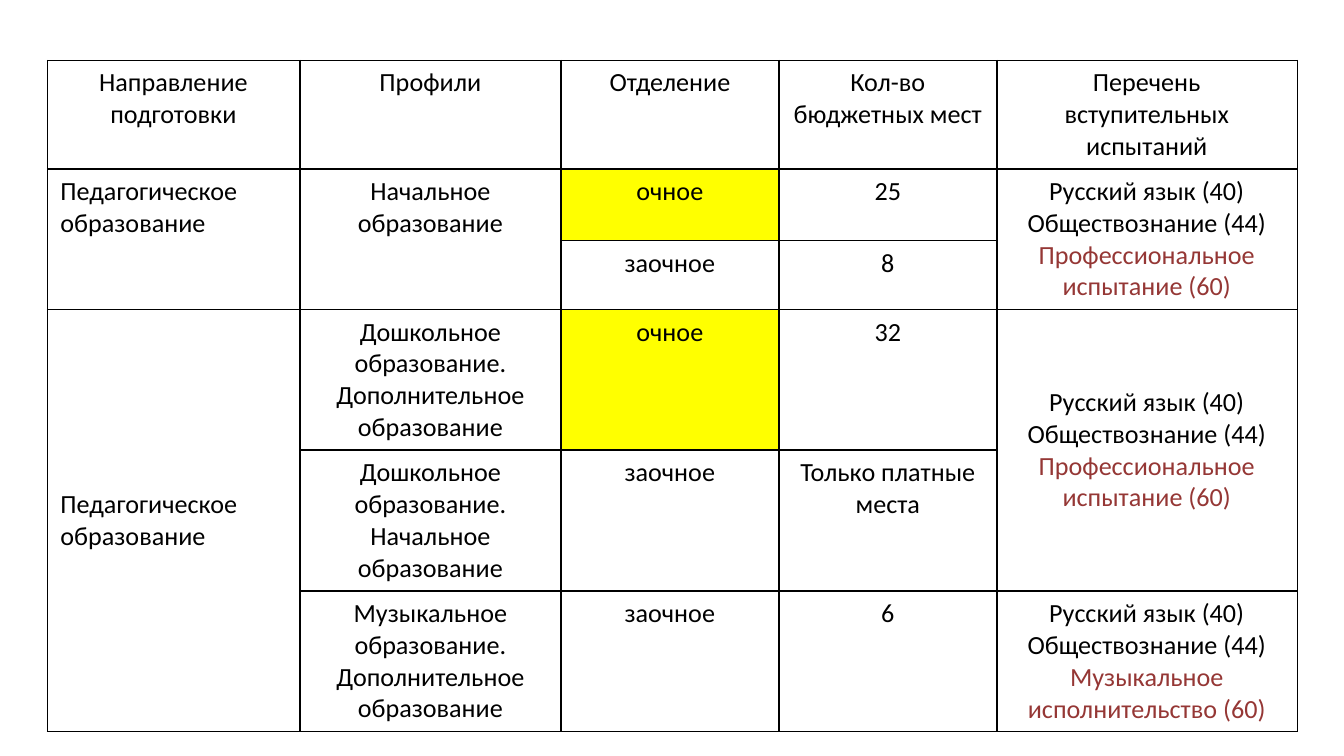
from lxml.etree import SubElement
from pptx import Presentation
from pptx.dml.color import RGBColor
from pptx.enum.text import MSO_ANCHOR, PP_ALIGN
from pptx.oxml.ns import qn
from pptx.util import Pt

PX = 914400 / 134.4
BLACK, RED, YELLOW = "000000", "953735", "FFFF00"
OUTER, THIN, INNER = 0.25, 0.5, 1


def px(length):
    return round(length * PX)


def color(value):
    return RGBColor.from_string(value)


class SlideBuilder:
    font_name = "Calibri"
    font_size = 14

    def __init__(self, deck):
        self.slide = deck.slides.add_slide(deck.slide_layouts[6])

    def table(self, left, top, widths, heights):
        frame = self.slide.shapes.add_table(
            len(heights), len(widths), px(left), px(top), px(sum(widths)), px(sum(heights)))
        table = frame.table
        table.first_row = table.horz_banding = False
        for column, width in zip(table.columns, widths):
            column.width = px(width)
        for row, height in zip(table.rows, heights):
            row.height = px(height)
        return table

    def borders(self, cell, edges):
        properties = cell._tc.get_or_add_tcPr()
        for side in "LRTB":
            line = SubElement(properties, qn(f"a:ln{side}"), w=str(Pt(edges[side])))
            solid = SubElement(line, qn("a:solidFill"))
            SubElement(solid, qn("a:srgbClr"), val=BLACK)

    def cell(self, table, row, col, lines, span=1, align=PP_ALIGN.CENTER,
             anchor=MSO_ANCHOR.TOP, fill=None, thin=""):
        """Fill one cell; lines holds (text, colour) pairs, thin names thin sides."""
        cell = table.cell(row, col)
        edges = {
            "L": INNER if col else OUTER,
            "R": INNER if col < len(table.columns) - 1 else OUTER,
            "T": INNER if row else OUTER,
            "B": INNER if row + span < len(table.rows) else OUTER,
        }
        edges.update({side: THIN for side in thin})
        for spanned in range(row, row + span):
            self.borders(table.cell(spanned, col), edges)
        if span > 1:
            cell.merge(table.cell(row + span - 1, col))
        if fill:
            cell.fill.solid()
            cell.fill.fore_color.rgb = color(fill)
        else:
            cell.fill.background()
        cell.vertical_anchor = anchor
        frame = cell.text_frame
        for number, (text, ink) in enumerate(lines):
            paragraph = frame.add_paragraph() if number else frame.paragraphs[0]
            paragraph.text = text
            paragraph.alignment = align
            paragraph.font.name = self.font_name
            paragraph.font.size = Pt(self.font_size)
            paragraph.font.color.rgb = color(ink)


def exams(special):
    return [("Русский язык (40)", BLACK), ("Обществознание (44)", BLACK), (special, RED)]


def main():
    deck = Presentation()
    deck.slide_width, deck.slide_height = px(1344), px(756)
    builder = SlideBuilder(deck)
    admission = builder.table(47, 60, [253, 261, 218, 218, 300],
                              [108, 72, 67, 139, 139, 139])

    # Header row
    headers = ["Направление подготовки", "Профили", "Отделение",
               "Кол-во бюджетных мест", "Перечень вступительных испытаний"]
    for col, header in enumerate(headers):
        builder.cell(admission, 0, col, [(header, BLACK)])

    # Fields of study: first row, rows spanned, anchor
    for row, span, anchor in [(1, 2, MSO_ANCHOR.TOP), (3, 3, MSO_ANCHOR.MIDDLE)]:
        builder.cell(admission, row, 0, [("Педагогическое образование", BLACK)],
                     span, PP_ALIGN.LEFT, anchor)

    # Profiles: first row, rows spanned, name
    profiles = [
        (1, 2, "Начальное образование"),
        (3, 1, "Дошкольное образование. Дополнительное образование"),
        (4, 1, "Дошкольное образование. Начальное образование"),
        (5, 1, "Музыкальное образование. Дополнительное образование"),
    ]
    for row, span, profile in profiles:
        builder.cell(admission, row, 1, [(profile, BLACK)], span)

    # Study modes and funded places
    places = [("очное", "25"), ("заочное", "8"), ("очное", "32"),
              ("заочное", "Только платные места"), ("заочное", "6")]
    for row, (mode, count) in enumerate(places, start=1):
        thin = {1: "B", 2: "T"}.get(row, "")
        builder.cell(admission, row, 2, [(mode, BLACK)], thin=thin,
                     fill=YELLOW if mode == "очное" else None)
        builder.cell(admission, row, 3, [(count, BLACK)], thin=thin)

    # Entrance exams: first row, rows spanned, anchor, special exam
    entrance = [
        (1, 2, MSO_ANCHOR.TOP, "Профессиональное испытание (60)"),
        (3, 2, MSO_ANCHOR.MIDDLE, "Профессиональное испытание (60)"),
        (5, 1, MSO_ANCHOR.MIDDLE, "Музыкальное исполнительство (60)"),
    ]
    for row, span, anchor, special in entrance:
        builder.cell(admission, row, 4, exams(special), span, anchor=anchor)

    deck.save("out.pptx")


if __name__ == "__main__":
    main()
